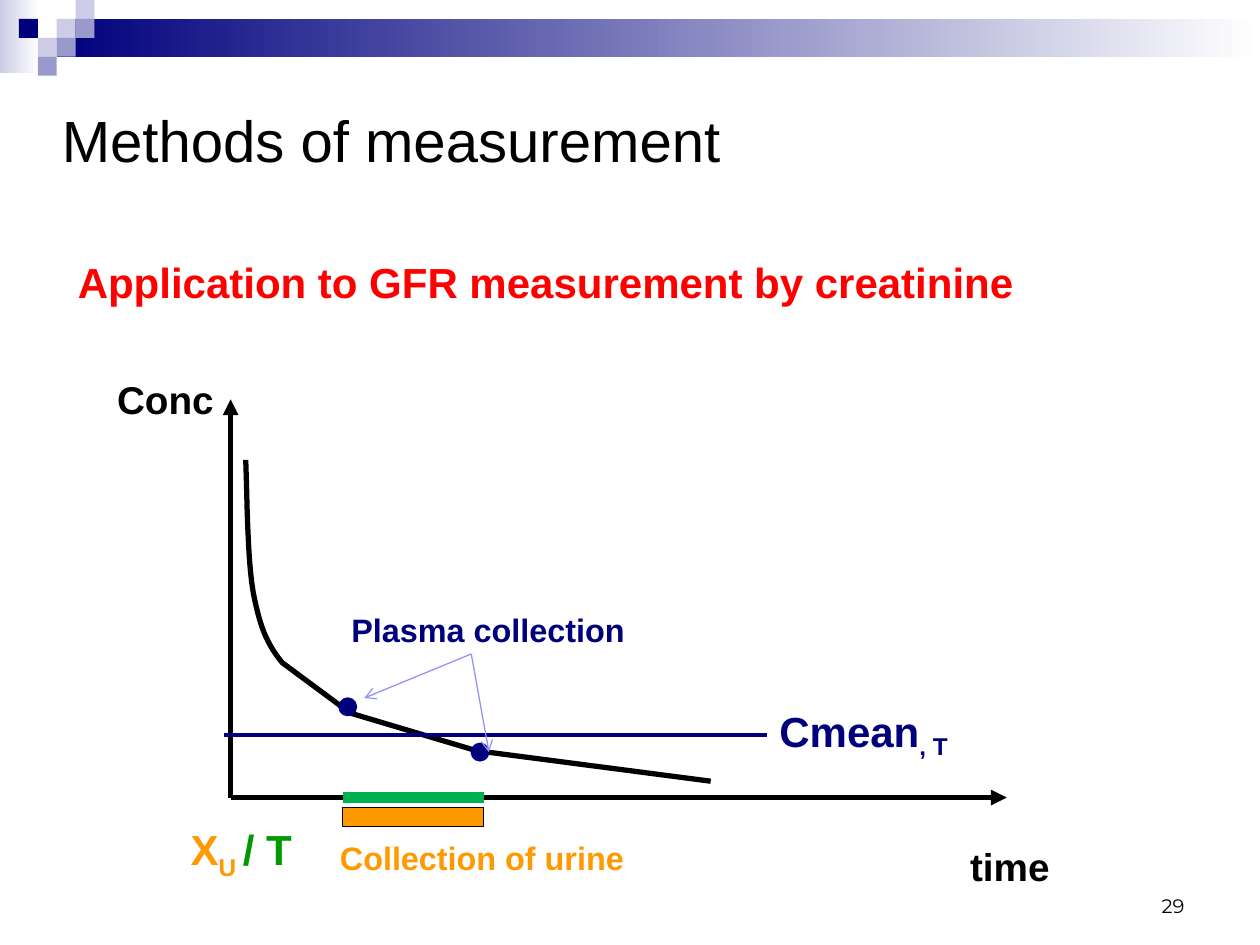
import dataclasses
import typing

import lxml.etree
import pptx
import pptx.dml.color
import pptx.enum.shapes
import pptx.enum.text
import pptx.oxml.ns
import pptx.util

Pt = pptx.util.Pt
Align = pptx.enum.text.PP_ALIGN
Anchor = pptx.enum.text.MSO_ANCHOR
Shape = pptx.enum.shapes.MSO_SHAPE
Point = tuple[float, float]
Box = tuple[float, float, float, float]


@dataclasses.dataclass(frozen=True)
class Theme:
    black: str = "000000"
    white: str = "FFFFFF"
    navy: str = "00007D"
    lavender: str = "CCCCE6"
    violet: str = "9999CC"
    pointer: str = "9393FC"
    orange: str = "FF9900"
    green: str = "009900"
    interval: str = "00B050"
    red: str = "FF0000"
    font: str = "Arial"
    number_font: str = "Montserrat"
    title: float = 33.2
    heading: float = 24
    axis: float = 22.1
    note: float = 18.5
    number: float = 11.1


THEME = Theme()


class Run(typing.NamedTuple):
    text: str
    color: str
    baseline: int = 0


@dataclasses.dataclass(frozen=True)
class Label:
    box: Box
    runs: list[Run]
    size: float
    bold: bool = True
    font: str = THEME.font
    align: Align = Align.LEFT
    anchor: Anchor = Anchor.TOP
    wrap: bool = False
    inset: Point = (7.2, 3.6)
    spacing: float = 1.0


class Line(typing.NamedTuple):
    start: Point
    end: Point
    color: str
    width: float
    head: str = ""


class Block(typing.NamedTuple):
    box: Box
    fill: str
    fade_to: str = ""
    outline: str = ""
    kind: Shape = Shape.RECTANGLE


TILE = 10.8
TILES = [(3, 1, THEME.lavender), (4, 0, THEME.lavender), (4, 1, THEME.violet),
         (2, 2, THEME.lavender), (1, 1, THEME.navy), (3, 2, THEME.violet),
         (2, 3, THEME.violet)]
ORIGIN = (131.8, 455.8)
URINE_START, URINE_END = 195.8, 276.5
SAMPLES = [(198.7, 403.9), (274.3, 429.8)]
DOT = 10.1
POINTER_START = (269.3, 373.7)

BANNER = [
    Block((0, 0, 22.3, 41.8), THEME.lavender, fade_to=THEME.white),
    Block((32.4, TILE, 687.6, 2 * TILE), THEME.navy, fade_to=THEME.white),
    *[Block((column * TILE, row * TILE, TILE, TILE), color) for column, row, color in TILES],
]
AXES = [
    Line(ORIGIN, (ORIGIN[0], 228.2), THEME.black, 3, "triangle"),
    Line(ORIGIN, (575.3, ORIGIN[1]), THEME.black, 3, "triangle"),
]
MARKS = [
    Block((URINE_START, 461.5, URINE_END - URINE_START, 10.8), THEME.orange, outline=THEME.black),
    *[Block((x - DOT / 2, y - DOT / 2, DOT, DOT), THEME.navy, outline=THEME.navy, kind=Shape.OVAL)
      for x, y in SAMPLES],
]
LINES = [
    Line((128.2, 419.8), (438.5, 419.8), THEME.navy, 2.25),
    Line(POINTER_START, (279.4, 429.8), THEME.pointer, 0.75, "arrow"),
    Line(POINTER_START, (208.1, 398.9), THEME.pointer, 0.75, "arrow"),
    Line((URINE_START, ORIGIN[1]), (URINE_END, ORIGIN[1]), THEME.interval, 6),
]
CURVES = [
    [(140.4, 262.8), (141.1, 275), (141.1, 319), (144.7, 338.4)],
    [(144.7, 338.4), (148.3, 357.1), (151.9, 367.2), (161.3, 378.7)],
]
TAIL = [(200.2, 407.5), (275, 429.8), (278.6, 429.8), (406.1, 446.4)]

TITLE = Label((28.1, 52.6, 659.5, 54), [Run("Methods of measurement", THEME.black)],
              THEME.title, bold=False, anchor=Anchor.MIDDLE, wrap=True)
LABELS = [
    Label((550.1, 483.1, 55.4, 27.4), [Run("time", THEME.black)], THEME.axis,
          inset=(4.3, 2.2), spacing=0.87),
    Label((62.6, 216, 65.5, 27.4), [Run("Conc", THEME.black)], THEME.axis,
          inset=(4.3, 2.2), spacing=0.87),
    Label((187.2, 475.2, 177.8, 29.5), [Run("Collection of urine", THEME.orange)], THEME.note),
    Label((79.9, 467.3, 115.9, 36),
          [Run("X", THEME.orange), Run("U ", THEME.orange, -25), Run("/ T", THEME.green)],
          THEME.heading, align=Align.CENTER, wrap=True),
    Label((422.6, 399.6, 141.8, 36), [Run("Cmean", THEME.navy), Run(", T", THEME.navy, -20)],
          THEME.heading, align=Align.CENTER, wrap=True),
    Label((193.7, 344.9, 172.1, 29.5), [Run("Plasma collection", THEME.navy)], THEME.note),
    Label((516.2, 491.8, 167.8, 36), [Run("29", THEME.black)], THEME.number, bold=False,
          font=THEME.number_font, align=Align.RIGHT, anchor=Anchor.BOTTOM, wrap=True),
    Label((37.4, 143.3, 554.4, 36),
          [Run("Application to GFR measurement by creatinine", THEME.red)], THEME.heading),
]


def rgb(color: str) -> pptx.dml.color.RGBColor:
    return pptx.dml.color.RGBColor.from_string(color)


def apply(target: typing.Any, values: dict[str, typing.Any]) -> None:
    for name, value in values.items():
        setattr(target, name, value)


def draw_block(shapes: typing.Any, block: Block) -> None:
    shape = shapes.add_shape(block.kind, *map(Pt, block.box))
    shape.shadow.inherit = False
    if block.fade_to:
        shape.fill.gradient()
        shape.fill.gradient_angle = 0
        for stop, color in zip(shape.fill.gradient_stops, (block.fill, block.fade_to)):
            stop.color.rgb = rgb(color)
    else:
        shape.fill.solid()
        shape.fill.fore_color.rgb = rgb(block.fill)
    if block.outline:
        shape.line.color.rgb = rgb(block.outline)
        shape.line.width = Pt(0.75)
    else:
        shape.line.fill.background()


def draw_line(shapes: typing.Any, line: Line) -> None:
    connector = shapes.add_connector(pptx.enum.shapes.MSO_CONNECTOR.STRAIGHT,
                                     *map(Pt, line.start + line.end))
    connector.line.color.rgb = rgb(line.color)
    connector.line.width = Pt(line.width)
    qn = pptx.oxml.ns.qn
    properties = connector._element.spPr
    if line.head:
        lxml.etree.SubElement(properties.find(qn("a:ln")), qn("a:tailEnd"), type=line.head)
    lxml.etree.SubElement(properties, qn("a:effectLst"))


def bezier(controls: list[Point], steps: int = 12) -> list[Point]:
    """Sample a cubic curve, leaving out its first point."""
    points = []
    for step in range(1, steps + 1):
        t = step / steps
        weights = ((1 - t) ** 3, 3 * t * (1 - t) ** 2, 3 * t * t * (1 - t), t ** 3)
        points.append(tuple(sum(w * p[axis] for w, p in zip(weights, controls)) for axis in (0, 1)))
    return points


def draw_decay(shapes: typing.Any) -> None:
    points = [point for controls in CURVES for point in bezier(controls)] + TAIL
    builder = shapes.build_freeform(*map(Pt, CURVES[0][0]))
    builder.add_line_segments([(Pt(x), Pt(y)) for x, y in points], close=False)
    decay = builder.convert_to_shape()
    decay.shadow.inherit = False
    decay.fill.background()
    decay.line.color.rgb = rgb(THEME.black)
    decay.line.width = Pt(3)


def write_label(shape: typing.Any, label: Label) -> None:
    apply(shape, dict(zip(("left", "top", "width", "height"), map(Pt, label.box))))
    side, edge = map(Pt, label.inset)
    frame = shape.text_frame
    apply(frame, {"word_wrap": label.wrap, "auto_size": pptx.enum.text.MSO_AUTO_SIZE.NONE,
                  "vertical_anchor": label.anchor, "margin_left": side, "margin_right": side,
                  "margin_top": edge, "margin_bottom": edge})
    paragraph = frame.paragraphs[0]
    apply(paragraph, {"alignment": label.align, "line_spacing": label.spacing})
    for part in label.runs:
        run = paragraph.add_run()
        run.text = part.text
        apply(run.font, {"size": Pt(label.size), "bold": label.bold, "name": label.font})
        run.font.color.rgb = rgb(part.color)
        if part.baseline:
            run._r.get_or_add_rPr().set("baseline", str(part.baseline * 1000))


def main() -> None:
    presentation = pptx.Presentation()
    apply(presentation, {"slide_width": Pt(720), "slide_height": Pt(540)})
    slide = presentation.slides.add_slide(presentation.slide_layouts.get_by_name("Title Only"))
    shapes = slide.shapes
    write_label(shapes.title, TITLE)
    for block in BANNER:
        draw_block(shapes, block)
    for axis in AXES:
        draw_line(shapes, axis)
    draw_decay(shapes)
    for mark in MARKS:
        draw_block(shapes, mark)
    for label in LABELS:
        write_label(shapes.add_textbox(*map(Pt, label.box)), label)
    for line in LINES:
        draw_line(shapes, line)
    presentation.save("out.pptx")


if __name__ == "__main__":
    main()
